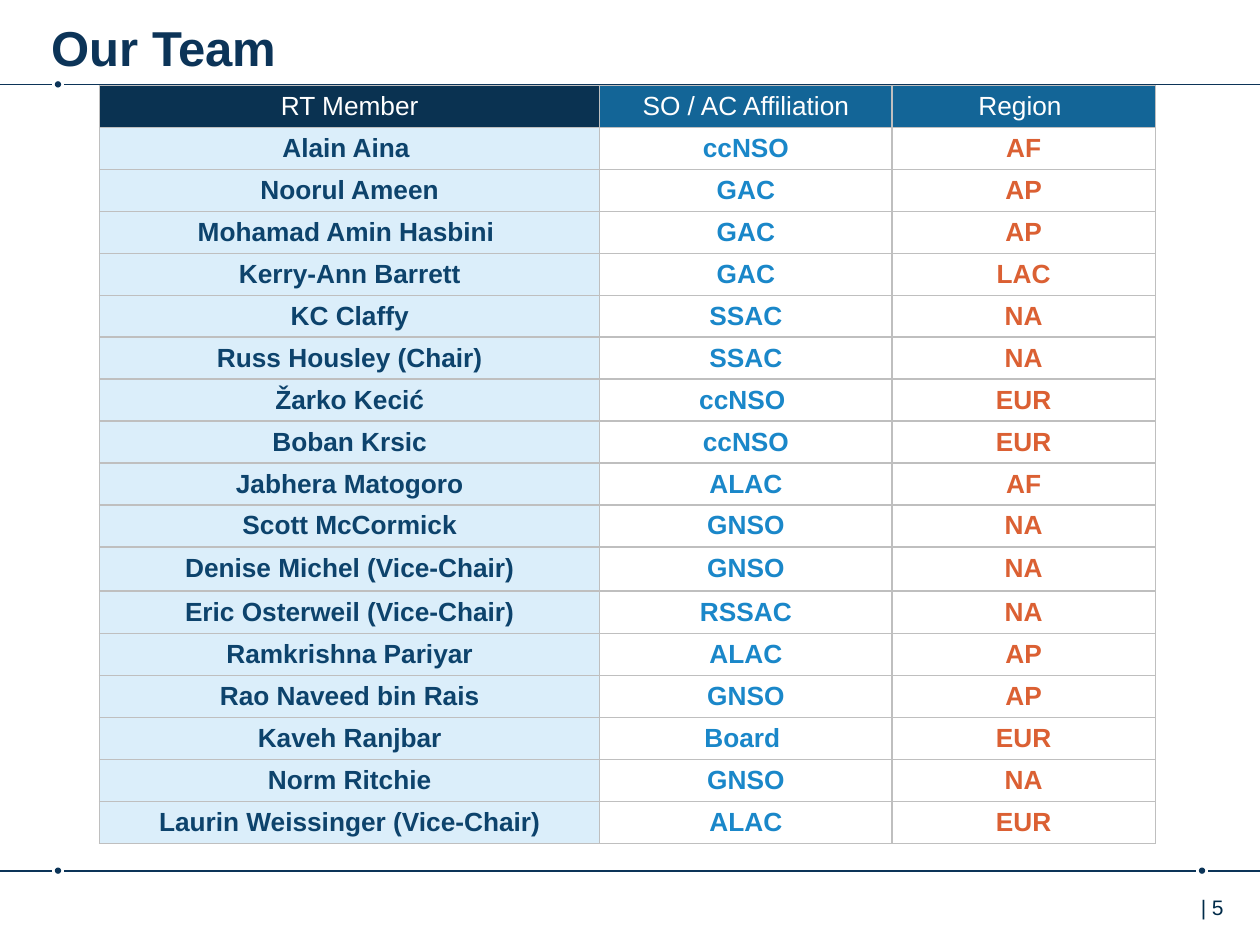
from lxml import etree
from pptx import Presentation
from pptx.dml.color import RGBColor
from pptx.enum.shapes import MSO_CONNECTOR, MSO_SHAPE
from pptx.enum.text import MSO_ANCHOR, MSO_AUTO_SIZE, PP_ALIGN
from pptx.oxml.ns import qn
from pptx.util import Inches, Pt

STRAIGHT = MSO_CONNECTOR.STRAIGHT
OVAL = MSO_SHAPE.OVAL
TOP, MIDDLE = MSO_ANCHOR.TOP, MSO_ANCHOR.MIDDLE
LEFT, CENTER = PP_ALIGN.LEFT, PP_ALIGN.CENTER
NO_FIT = MSO_AUTO_SIZE.NONE

FONT = "Arial"
WIDTH, HEIGHT = 10, 7.5
TITLE_ONLY = 5
DOT_SIZE = 0.05
DOT_GAP = 0.05
RULE_TOP, RULE_BOTTOM = 0.67, 6.91
DOT_LEFT, DOT_RIGHT = 0.46, 9.54

COLORS = {
    "navy": "0C3458",
    "number": "002B49",
    "border": "BFBFBF",
    "white": "FFFFFF",
    "head_dark": "0A3251",
    "head_blue": "136597",
    "member_fill": "CDE8F9",
    "member": "0D436C",
    "affiliation": "1A87C9",
    "region": "DB6033",
}

HEADINGS = ("RT Member", "SO / AC Affiliation", "Region ")
HEADING_FILLS = ("head_dark", "head_blue", "head_blue")
BODY_FILLS = ("member_fill", "white", "white")
BODY_COLORS = ("member", "affiliation", "region")
COLUMN_WIDTHS = (3.97, 2.32, 2.09)
ROW_HEIGHT = 0.333
TALL_ROWS = {11: 0.35, 12: 0.34}
TEAM = [
    ("Alain Aina ", "ccNSO", "AF"),
    ("Noorul Ameen", "GAC", "AP"),
    ("Mohamad Amin Hasbini ", "GAC", "AP"),
    ("Kerry-Ann Barrett", "GAC", "LAC"),
    ("KC Claffy", "SSAC", "NA"),
    ("Russ Housley (Chair)", "SSAC", "NA"),
    ("Žarko Kecić", "ccNSO ", "EUR"),
    ("Boban Krsic", "ccNSO", "EUR"),
    ("Jabhera Matogoro", "ALAC", "AF"),
    ("Scott McCormick", "GNSO", "NA"),
    ("Denise Michel (Vice-Chair)", "GNSO", "NA"),
    ("Eric Osterweil (Vice-Chair)", "RSSAC", "NA"),
    ("Ramkrishna Pariyar", "ALAC", "AP"),
    ("Rao Naveed bin Rais", "GNSO", "AP"),
    ("Kaveh Ranjbar", "Board ", "EUR"),
    ("Norm Ritchie", "GNSO", "NA"),
    ("Laurin Weissinger (Vice-Chair)", "ALAC", "EUR"),
]


def color(name):
    return RGBColor.from_string(COLORS[name])


def place(item, left, top, width, height):
    item.left, item.top = Inches(left), Inches(top)
    item.width, item.height = Inches(width), Inches(height)


def write(frame, text, size, color_name, bold=False, align=LEFT):
    para = frame.paragraphs[0]
    para.alignment = align
    span = para.add_run()
    span.text = text
    span.font.name = FONT
    span.font.size = Pt(size)
    span.font.bold = bold
    span.font.color.rgb = color(color_name)


def add_dot(page, center, middle):
    corner = [Inches(value - DOT_SIZE / 2) for value in (center, middle)]
    dot = page.shapes.add_shape(OVAL, *corner, Inches(DOT_SIZE), Inches(DOT_SIZE))
    dot.shadow.inherit = False
    dot.fill.solid()
    dot.fill.fore_color.rgb = color("navy")
    dot.line.fill.background()


def add_line(page, start, end, height):
    line = page.shapes.add_connector(
        STRAIGHT, Inches(start), Inches(height), Inches(end), Inches(height))
    line.line.color.rgb = color("navy")
    line.line.width = Pt(1)
    etree.SubElement(line._element.spPr, qn("a:effectLst"))


def add_dotted_rule(page, height, dots):
    start = 0
    for center in dots:
        add_line(page, start, center - DOT_GAP, height)
        add_dot(page, center, height)
        start = center + DOT_GAP
    add_line(page, start, WIDTH, height)


def add_title(page, text):
    title = page.shapes.title
    place(title, 0.41, 0.05, 8.76, 0.49)
    frame = title.text_frame
    frame.auto_size = NO_FIT
    frame.vertical_anchor = TOP
    frame.margin_left = frame.margin_right = frame.margin_bottom = 0
    frame.margin_top = Inches(0.09)
    write(frame, text, 28, "navy", bold=True)


def add_page_number(page, text):
    box = page.shapes.add_textbox(0, 0, 0, 0)
    place(box, 9.29, 7.05, 0.87, 0.4)
    frame = box.text_frame
    frame.word_wrap = True
    frame.margin_left = Inches(0.24)
    write(frame, text, 12, "number")


def add_borders(cell):
    properties = cell._tc.get_or_add_tcPr()
    for side in ("a:lnL", "a:lnR", "a:lnT", "a:lnB"):
        border = etree.SubElement(properties, qn(side), w=str(Pt(1)))
        fill = etree.SubElement(border, qn("a:solidFill"))
        etree.SubElement(fill, qn("a:srgbClr"), val=COLORS["border"])


def fill_cell(cell, name, opacity):
    cell.fill.solid()
    cell.fill.fore_color.rgb = color(name)
    if opacity < 100:
        shade = cell._tc.tcPr.find(qn("a:solidFill")).find(qn("a:srgbClr"))
        etree.SubElement(shade, qn("a:alpha"), val=str(opacity * 1000))


def format_cell(cell, text, text_color, fill, heading):
    add_borders(cell)
    fill_cell(cell, fill, 100 if heading else 70)
    cell.vertical_anchor = MIDDLE
    cell.margin_top = cell.margin_bottom = Inches(0.04)
    write(cell.text_frame, text, 15, text_color, bold=not heading, align=CENTER)


def add_team_table(page):
    rows = [HEADINGS] + TEAM
    heights = [TALL_ROWS.get(index, ROW_HEIGHT) for index in range(len(rows))]
    table = page.shapes.add_table(
        len(rows), len(HEADINGS), Inches(0.79), Inches(0.68),
        Inches(sum(COLUMN_WIDTHS)), Inches(sum(heights))).table
    for column, width in zip(table.columns, COLUMN_WIDTHS):
        column.width = Inches(width)
    for index, texts in enumerate(rows):
        table.rows[index].height = Inches(heights[index])
        heading = index == 0
        fills = HEADING_FILLS if heading else BODY_FILLS
        colors = ("white",) * 3 if heading else BODY_COLORS
        for position, values in enumerate(zip(texts, colors, fills)):
            format_cell(table.cell(index, position), *values, heading)


def main():
    deck = Presentation()
    deck.slide_width, deck.slide_height = Inches(WIDTH), Inches(HEIGHT)
    page = deck.slides.add_slide(deck.slide_layouts[TITLE_ONLY])
    add_dotted_rule(page, RULE_TOP, [DOT_LEFT])
    add_dotted_rule(page, RULE_BOTTOM, [DOT_LEFT, DOT_RIGHT])
    add_page_number(page, "| 5")
    add_title(page, "Our Team")
    add_team_table(page)
    deck.save("out.pptx")


if __name__ == "__main__":
    main()
